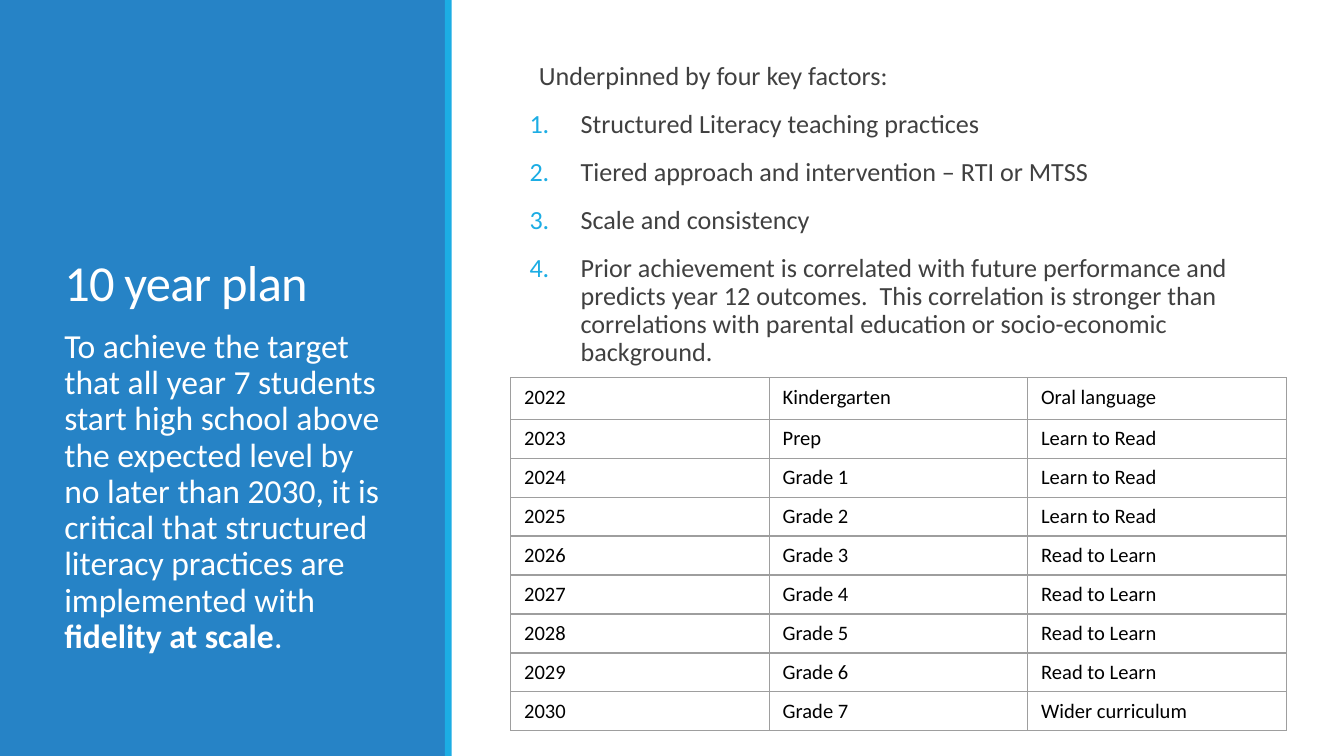
from pptx import Presentation
from pptx import util as u
from pptx.dml.color import RGBColor
from pptx.enum import shapes, text
from pptx.oxml import ns
from lxml import etree

Inches, Pt = u.Inches, u.Pt
WIDE = 10
HIGH = WIDE * 9 / 16
BLUE = RGBColor(0x26, 0x83, 0xC6)
CYAN = RGBColor(0x1C, 0xAD, 0xE4)
WHITE = RGBColor(0xFF, 0xFF, 0xFF)
BLACK = RGBColor(0, 0, 0)
DARK = RGBColor(0x40, 0x40, 0x40)
GREY = RGBColor(0x9E, 0x9E, 0x9E)

FACTORS = [
    "Structured Literacy teaching practices",
    "Tiered approach and intervention – RTI or MTSS",
    "Scale and consistency",
    "Prior achievement is correlated with future performance and predicts "
    "year 12 outcomes.  This correlation is stronger than correlations with "
    "parental education or socio-economic background.",
]
STAGES = ["Kindergarten", "Prep"] + [f"Grade {n}" for n in range(1, 8)]
GOALS = (["Oral language"] + ["Learn to Read"] * 3
         + ["Read to Learn"] * 4 + ["Wider curriculum"])


def add(node, tag, **attrs):
    return etree.SubElement(node, ns.qn(tag), **attrs)


def style(par, size, color):
    par.font.name = "Calibri"
    par.font.size = Pt(size)
    par.font.color.rgb = color


def space(par):
    par.line_spacing = 0.9
    par.space_before = Pt(9)
    par.space_after = Pt(1.5)


def bar(slide, x, y, w, h, color):
    rect = slide.shapes.add_shape(
        shapes.MSO_SHAPE.RECTANGLE, Inches(x), Inches(y), Inches(w), Inches(h))
    rect.shadow.inherit = False
    rect.fill.solid()
    rect.fill.fore_color.rgb = color
    rect.line.fill.background()


def box(slide, x, y, w, h):
    shape = slide.shapes.add_textbox(Inches(x), Inches(y), Inches(w), Inches(h))
    shape.text_frame.word_wrap = True
    return shape.text_frame


def panel(slide, x, y, w, h):
    bar(slide, x, y, w - 0.04, h, BLUE)
    bar(slide, x + w - 0.05, y, 0.05, h, CYAN)

    title = box(slide, x + 0.38, y + 0.49, 2.62, 1.88)
    title.vertical_anchor = text.MSO_ANCHOR.BOTTOM
    par = title.paragraphs[0]
    run = par.add_run()
    run.text = "10 year plan"
    par.line_spacing = 0.85
    style(par, 27, WHITE)
    run.font._element.set("spc", "-40")

    par = box(slide, x + 0.38, y + 2.4, 2.62, 2.77).paragraphs[0]
    space(par)
    style(par, 18, WHITE)
    par.add_run().text = (
        "To achieve the target that all year 7 students start high school "
        "above the expected level by no later than 2030, it is critical that "
        "structured literacy practices are implemented with ")
    bold = par.add_run()
    bold.text = "fidelity at scale"
    bold.font.bold = True
    par.add_run().text = "."


def factors(slide, x, y, w, h):
    frame = box(slide, x, y, w, h)
    frame.margin_left = frame.margin_right = 0
    par = frame.paragraphs[0]
    par.text = "Underpinned by four key factors:"
    par._p.get_or_add_pPr().set("marL", str(Inches(0.07)))
    space(par)
    style(par, 14, DARK)
    for line in FACTORS:
        par = frame.add_paragraph()
        par.text = line
        space(par)
        props = par._p.get_or_add_pPr()
        props.set("marL", str(Inches(0.38)))
        props.set("indent", str(-Inches(0.38)))
        add(add(props, "a:buClr"), "a:srgbClr", val=str(CYAN))
        add(props, "a:buFont", typeface="Calibri")
        add(props, "a:buAutoNum", type="arabicPeriod")
        style(par, 14, DARK)


def border(cell):
    props = cell._tc.get_or_add_tcPr()
    for side in ("L", "R", "T", "B"):
        line = add(props, f"a:ln{side}", w=str(Pt(0.75)))
        add(add(line, "a:solidFill"), "a:srgbClr", val=str(GREY))


def plan(slide, x, y, w, h):
    rows = [(str(2022 + i), *pair) for i, pair in enumerate(zip(STAGES, GOALS))]
    table = slide.shapes.add_table(
        len(rows), 3, Inches(x), Inches(y), Inches(w), Inches(h)).table
    table.first_row = table.horz_banding = False
    for col in table.columns:
        col.width = Inches(w / 3)
    for i, row in enumerate(rows):
        table.rows[i].height = Inches(0.29 if i else 0.31)
        for j, word in enumerate(row):
            cell = table.cell(i, j)
            cell.text = word
            style(cell.text_frame.paragraphs[0], 11, BLACK)
            border(cell)
            cell.fill.background()


def main():
    prs = Presentation()
    prs.slide_width = Inches(WIDE)
    prs.slide_height = Inches(HIGH)
    slide = prs.slides.add_slide(prs.slide_layouts[6])
    panel(slide, 0, 0, 3.36, HIGH)
    factors(slide, 3.94, 0.42, 5.33, 4.49)
    plan(slide, 3.8, 2.81, 5.77, 2.63)
    prs.save("out.pptx")


if __name__ == "__main__":
    main()
